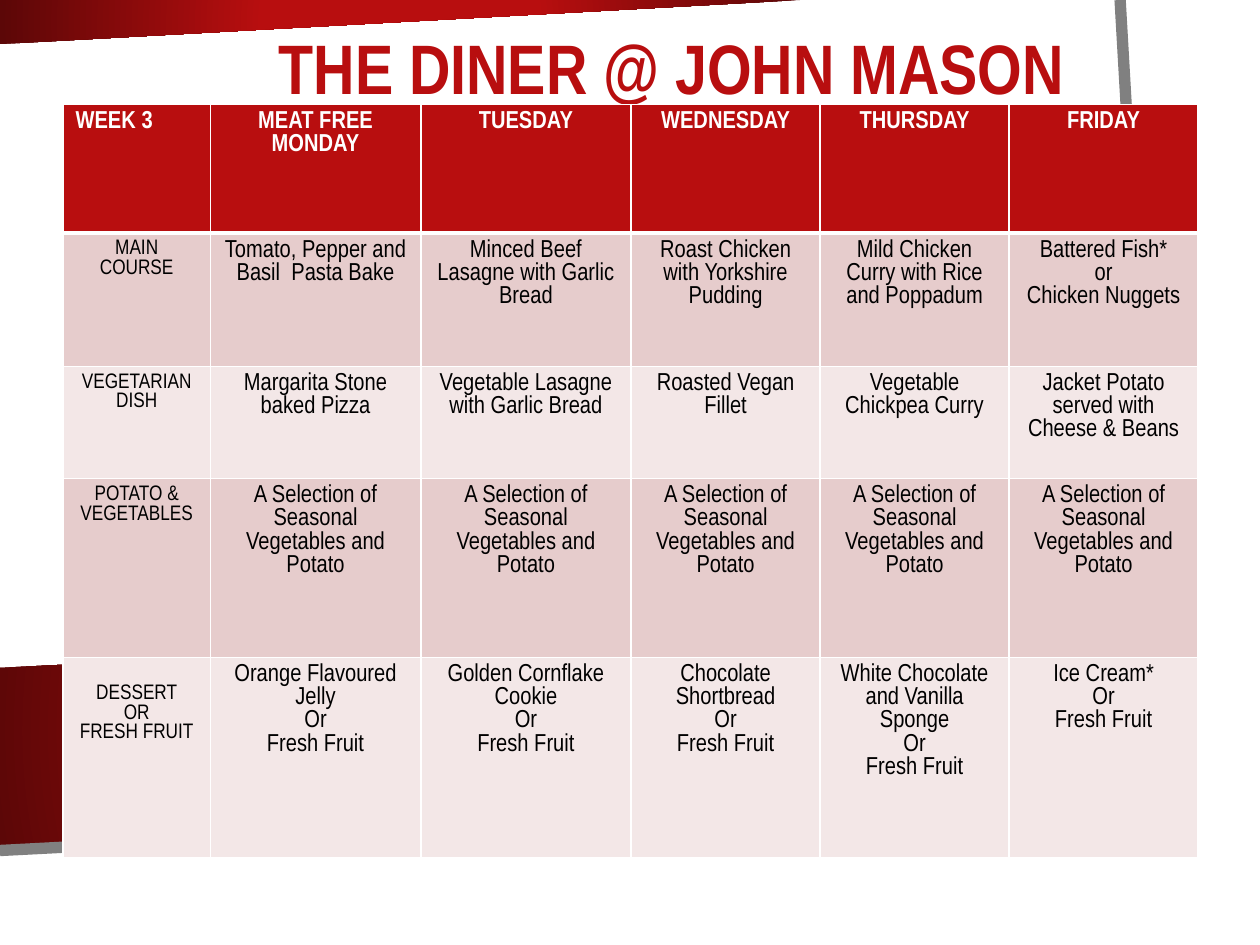
from pptx import Presentation
from pptx.dml.color import RGBColor
from pptx.enum.text import MSO_ANCHOR, PP_ALIGN
from pptx.oxml import parse_xml
from pptx.oxml.ns import nsdecls
from pptx.util import Inches, Pt

COLORS = {
    "red": "B80E0F",
    "dark red": "5C0707",
    "gray": "808080",
    "white": "FFFFFF",
    "black": "000000",
    "pink": "E6CCCC",
    "pale pink": "F3E7E7",
}
FONT = "Arial Narrow"
COLUMN_WIDTHS = [1.17, 1.67, 1.67, 1.5, 1.5, 1.5]
ROW_HEIGHTS = [1.02, 1.06, 0.89, 1.42, 1.59]
SIDES = ["A Selection of Seasonal Vegetables and Potato"] * 5
MENU = [
    ["WEEK 3", "MEAT FREE MONDAY", "TUESDAY", "WEDNESDAY", "THURSDAY", "FRIDAY"],
    ["MAIN\nCOURSE", "Tomato, Pepper and Basil  Pasta Bake",
     "Minced Beef Lasagne with Garlic Bread",
     "Roast Chicken with Yorkshire Pudding",
     "Mild Chicken Curry with Rice and Poppadum",
     "Battered Fish*\nor\nChicken Nuggets"],
    ["VEGETARIAN DISH", "Margarita Stone baked Pizza",
     "Vegetable Lasagne with Garlic Bread", "Roasted Vegan Fillet",
     "Vegetable Chickpea Curry", "Jacket Potato served with Cheese & Beans"],
    ["POTATO & VEGETABLES", *SIDES],
    ["DESSERT\nOR\nFRESH FRUIT"] + [
        f"{dessert}\nFresh Fruit" for dessert in (
            "Orange Flavoured Jelly\nOr", "Golden Cornflake Cookie\nOr",
            "Chocolate Shortbread\nOr", "White Chocolate and Vanilla Sponge\nOr",
            "Ice Cream*\nOr")],
]


def rgb(name):
    return RGBColor.from_string(COLORS[name])


def write_text(frame, text, size=14, color="black", bold=False,
               align=PP_ALIGN.CENTER, line_spacing=None):
    frame.word_wrap = True
    for index, line in enumerate(text.split("\n")):
        paragraph = frame.paragraphs[0] if index == 0 else frame.add_paragraph()
        paragraph.alignment = align
        if line_spacing:
            paragraph.line_spacing = line_spacing
        run = paragraph.add_run()
        run.text = line
        run.font.name = FONT
        run.font.size = Pt(size)
        run.font.bold = bold
        run.font.color.rgb = rgb(color)


def add_outline(slide, points, close):
    corners = [(Inches(x), Inches(y)) for x, y in points]
    builder = slide.shapes.build_freeform(*corners[0])
    builder.add_line_segments(corners[1:], close=close)
    outline = builder.convert_to_shape()
    outline.shadow.inherit = False
    outline.fill.background()
    outline.line.fill.background()
    return outline


def add_band(slide, points):
    """Add a red band that darkens in a circle from its centre."""
    properties = add_outline(slide, points, close=True)._element.spPr
    gradient = parse_xml(
        f'<a:gradFill {nsdecls("a")} rotWithShape="1"><a:gsLst>'
        f'<a:gs pos="34000"><a:srgbClr val="{COLORS["red"]}"/></a:gs>'
        f'<a:gs pos="100000"><a:srgbClr val="{COLORS["dark red"]}"/></a:gs>'
        '</a:gsLst><a:path path="circle"><a:fillToRect l="50000" t="50000" '
        'r="50000" b="50000"/></a:path></a:gradFill>')
    properties.replace(properties.eg_fillProperties, gradient)


def add_backdrop(slide):
    add_band(slide, [(0, 5.3), (9.15, 4.86), (9.25, 6.28), (0, 6.74)])
    add_band(slide, [(0, 0), (6.35, 0), (0, 0.35)])
    edge = add_outline(slide, [(8.89, 0), (9.25, 6.27), (0, 6.75)], close=False)
    edge.line.color.rgb = rgb("gray")
    edge.line.width = Pt(6.5)


def add_title(slide, left, top, width, height):
    title = slide.shapes.add_textbox(left, top, width, height)
    title.text_frame.vertical_anchor = MSO_ANCHOR.BOTTOM
    write_text(title.text_frame, "THE DINER @ JOHN MASON", size=40,
               color="red", bold=True, line_spacing=0.9)


def set_borders(cell, bottom_width):
    properties = cell._tc.get_or_add_tcPr()
    widths = {"lnL": 1, "lnR": 1, "lnT": 1, "lnB": bottom_width}
    for position, (side, width) in enumerate(widths.items()):
        properties.insert(position, parse_xml(
            f'<a:{side} {nsdecls("a")} w="{Pt(width)}"><a:solidFill>'
            f'<a:srgbClr val="{COLORS["white"]}"/></a:solidFill></a:{side}>'))


def add_menu(slide, left, top, width, height):
    menu = slide.shapes.add_table(
        len(MENU), len(MENU[0]), left, top, width, height).table
    for column, column_width in zip(menu.columns, COLUMN_WIDTHS):
        column.width = Inches(column_width)
    for row, row_height in zip(menu.rows, ROW_HEIGHTS):
        row.height = Inches(row_height)

    for r, dishes in enumerate(MENU):
        header = r == 0
        fill = "red" if header else ("pale pink", "pink")[r % 2]
        for c, dish in enumerate(dishes):
            cell = menu.cell(r, c)
            cell.fill.solid()
            cell.fill.fore_color.rgb = rgb(fill)
            set_borders(cell, bottom_width=3 if header else 1)
            write_text(cell.text_frame, dish,
                       size=12 if c == 0 and not header else 14,
                       color="white" if header else "black", bold=header,
                       align=PP_ALIGN.LEFT if header and c == 0 else PP_ALIGN.CENTER)
    menu.cell(len(MENU) - 1, 0).margin_top = Inches(0.21)


def main():
    presentation = Presentation()
    presentation.slide_width = Inches(10)
    presentation.slide_height = Inches(7.5)
    slide = presentation.slides.add_slide(presentation.slide_layouts[6])
    add_backdrop(slide)
    add_title(slide, Inches(1.08), Inches(0.25), Inches(8.5), Inches(0.67))
    add_menu(slide, Inches(0.5), Inches(0.83),
             Inches(sum(COLUMN_WIDTHS)), Inches(sum(ROW_HEIGHTS)))
    presentation.save("out.pptx")


if __name__ == "__main__":
    main()
